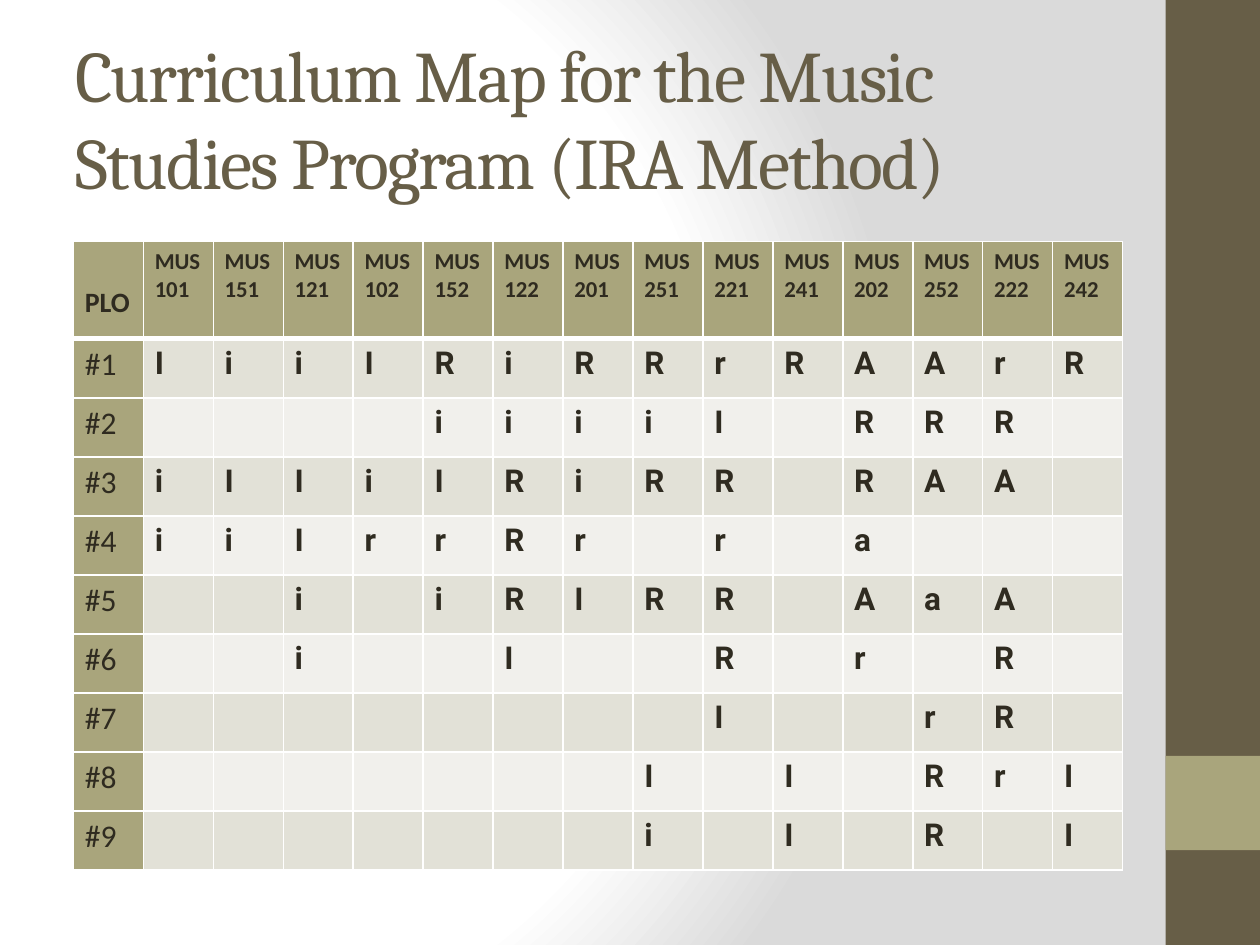
from dataclasses import dataclass

from pptx import Presentation
from pptx.dml.color import RGBColor
from pptx.enum.shapes import MSO_SHAPE
from pptx.enum.text import MSO_ANCHOR
from pptx.oxml import parse_xml
from pptx.oxml.ns import nsdecls
from pptx.util import Cm, Pt

RECTANGLE = MSO_SHAPE.RECTANGLE
MIDDLE = MSO_ANCHOR.MIDDLE


@dataclass(frozen=True)
class Theme:
    brown: str = "675E47"
    olive: str = "A9A57C"
    ink: str = "2F2B20"
    white: str = "FFFFFF"
    grey: str = "DADADA"
    bands: tuple = ("E2E1D7", "F1F0EC")
    title_size: float = 41.4
    plo_size: float = 16
    course_size: float = 13
    body_size: float = 18
    thin_rule: float = 1
    header_rule: float = 3


@dataclass(frozen=True)
class Panel:
    left: float
    top: float
    width: float
    height: float
    color: str


@dataclass(frozen=True)
class CellStyle:
    fill: str
    font: dict
    margin_top: float = 0.13


THEME = Theme()

SIDEBAR = (
    Panel(23.5, 0, 1.9, 19.05, THEME.brown),
    Panel(23.5, 15.24, 1.9, 1.9, THEME.olive),
)

COURSES = "101 151 121 102 152 122 201 251 221 241 202 252 222 242".split()
OUTCOMES = (
    "I i i I R i R R r R A A r R",
    "- - - - i i i i I - R R R -",
    "i I I i I R i R R - R A A -",
    "i i I r r R r - r - a - - -",
    "- - i - i R I R R - A a A -",
    "- - i - - I - - R - r - R -",
    "- - - - - - - - I - - r R -",
    "- - - - - - - I - I - R r I",
    "- - - - - - - i - I - R - I",
)

COLUMN_WIDTH = 1.41
HEADER_HEIGHT = 1.96
ROW_HEIGHT = 1.19


def font_format(name: str, size: float, bold: bool) -> dict:
    return {"name": name, "size": Pt(size), "bold": bold}


PLO_STYLE = CellStyle(THEME.olive, font_format("Calibri", THEME.plo_size, True), 0.9)
COURSE_STYLE = CellStyle(THEME.olive, font_format("Calibri", THEME.course_size, True))
NUMBER_STYLE = CellStyle(THEME.olive, font_format("Calibri", THEME.body_size, False))
LEVEL_STYLES = [
    CellStyle(band, font_format("Roboto", THEME.body_size, True)) for band in THEME.bands
]


def apply_format(target, values: dict) -> None:
    for attribute, value in values.items():
        setattr(target, attribute, value)


def paint_background(slide) -> None:
    stops = ((0, THEME.white), (75, THEME.white), (100, THEME.grey))
    stop_xml = "".join(
        f'<a:gs pos="{position * 1000}"><a:srgbClr val="{color}"/></a:gs>'
        for position, color in stops
    )
    background = parse_xml(
        f'<p:bg {nsdecls("p", "a")}><p:bgPr><a:gradFill rotWithShape="1">'
        f'<a:gsLst>{stop_xml}</a:gsLst><a:path path="circle">'
        '<a:fillToRect l="20000" t="50000" r="100000" b="50000"/></a:path>'
        "</a:gradFill><a:effectLst/></p:bgPr></p:bg>"
    )
    slide.element.cSld.insert(0, background)


def draw_panel(slide, panel: Panel) -> None:
    bar = slide.shapes.add_shape(
        RECTANGLE, Cm(panel.left), Cm(panel.top), Cm(panel.width), Cm(panel.height)
    )
    bar.shadow.inherit = False
    bar.fill.solid()
    bar.fill.fore_color.rgb = RGBColor.from_string(panel.color)
    bar.line.fill.background()


def draw_title(slide, text: str) -> None:
    heading = slide.shapes.add_textbox(Cm(1.27), Cm(0.76), Cm(21.16), Cm(3.18)).text_frame
    apply_format(heading, {"word_wrap": True, "vertical_anchor": MIDDLE})
    title = heading.paragraphs[0].add_run()
    title.text = text
    apply_format(title.font, font_format("Cambria", THEME.title_size, False))
    title.font.color.rgb = RGBColor.from_string(THEME.brown)
    title.font._element.set("spc", "-100")


def draw_borders(cell, top: float, bottom: float) -> None:
    properties = cell._tc.get_or_add_tcPr()
    widths = {"L": THEME.thin_rule, "R": THEME.thin_rule, "T": top, "B": bottom}
    for index, (side, width) in enumerate(widths.items()):
        border = parse_xml(
            f'<a:ln{side} {nsdecls("a")} w="{Pt(width)}"><a:solidFill>'
            f'<a:srgbClr val="{THEME.white}"/></a:solidFill></a:ln{side}>'
        )
        properties.insert(index, border)


def fill_cell(cell, text: str, style: CellStyle) -> None:
    apply_format(cell, {
        "text": text,
        "margin_left": Cm(0.23),
        "margin_right": Cm(0.23),
        "margin_top": Cm(style.margin_top),
        "margin_bottom": Cm(0.13),
    })
    cell.fill.solid()
    cell.fill.fore_color.rgb = RGBColor.from_string(style.fill)
    for paragraph in cell.text_frame.paragraphs:
        apply_format(paragraph.font, style.font)
        for run in paragraph.runs:
            apply_format(run.font, style.font)
            run.font.color.rgb = RGBColor.from_string(THEME.ink)


def draw_map(slide) -> None:
    row_count, column_count = len(OUTCOMES) + 1, len(COURSES) + 1
    curriculum = slide.shapes.add_table(
        row_count, column_count, Cm(1.48), Cm(4.87),
        Cm(COLUMN_WIDTH * column_count), Cm(HEADER_HEIGHT + ROW_HEIGHT * len(OUTCOMES)),
    ).table
    apply_format(curriculum, {"first_row": False, "horz_banding": False})
    for column in curriculum.columns:
        column.width = Cm(COLUMN_WIDTH)
    for index, row in enumerate(curriculum.rows):
        row.height = Cm(ROW_HEIGHT if index else HEADER_HEIGHT)

    header = [("PLO", PLO_STYLE)] + [(f"MUS\n{course}", COURSE_STYLE) for course in COURSES]
    content = [header]
    for index, levels in enumerate(OUTCOMES):
        level_style = LEVEL_STYLES[index % len(LEVEL_STYLES)]
        marks = [(level.replace("-", ""), level_style) for level in levels.split()]
        content.append([(f"#{index + 1}", NUMBER_STYLE)] + marks)

    for row_index, entries in enumerate(content):
        top = THEME.header_rule if row_index == 1 else THEME.thin_rule
        bottom = THEME.header_rule if row_index == 0 else THEME.thin_rule
        for column_index, (text, style) in enumerate(entries):
            cell = curriculum.cell(row_index, column_index)
            fill_cell(cell, text, style)
            draw_borders(cell, top, bottom)


def main() -> None:
    deck = Presentation()
    apply_format(deck, {"slide_width": Cm(25.4), "slide_height": Cm(19.05)})
    slide = deck.slides.add_slide(deck.slide_layouts[6])
    paint_background(slide)
    for panel in SIDEBAR:
        draw_panel(slide, panel)
    draw_title(slide, "Curriculum Map for the Music Studies Program (IRA Method)")
    draw_map(slide)
    deck.save("out.pptx")


if __name__ == "__main__":
    main()
